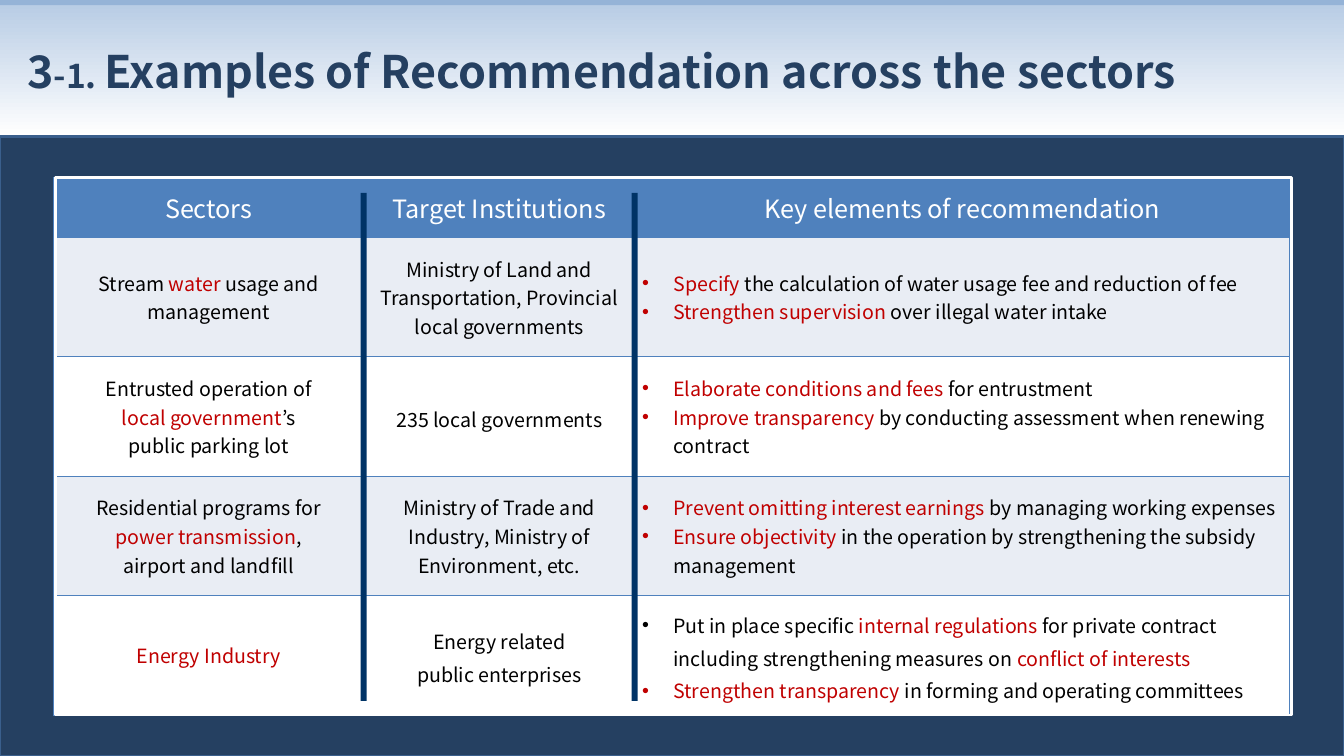
from dataclasses import dataclass

from lxml import etree
from pptx import Presentation
from pptx import util as u
from pptx.dml.color import RGBColor
from pptx.enum import shapes, text
from pptx.oxml import ns

Cm, Pt = u.Cm, u.Pt


@dataclass(frozen=True)
class Theme:
    font: str = "Noto Sans CJK KR"
    navy: str = "254061"
    navy_line: str = "3A5F8C"
    sky: str = "B9CDE5"
    top_strip: str = "95B3D7"
    blue: str = "4F81BD"
    stripe: str = "E9EDF4"
    divider: str = "003366"
    accent: str = "C00000"
    white: str = "FFFFFF"
    black: str = "000000"
    title_size: int = 32
    number_size: int = 24
    header_size: int = 18
    body_size: int = 14


T = Theme()
WIDTH, HEIGHT = 33.87, 19.05
PANEL_TOP = 3.45
TABLE_LEFT, TABLE_TOP = 1.35, 4.48
COLUMNS = [7.82, 6.83, 16.51]
HEADER_HEIGHT, ROW_HEIGHT = 1.5, 3.01

# Text between bars is set in the accent colour; a third item is line spacing.
HEADERS = ["Sectors", "Target Institutions", "Key elements of recommendation"]
ROWS = [
    [(["Stream |water| usage and management"], 1),
     (["Ministry of Land and Transportation, Provincial local governments"], 1),
     (["|Specify| the calculation of water usage fee and reduction of fee",
       "|Strengthen supervision |over illegal water intake"], 1)],
    [(["Entrusted operation of", "|local government|’s", "public parking lot"], 1),
     (["235 local governments"], 1.15),
     (["|Elaborate conditions and fees |for entrustment",
       "|Improve transparency |by conducting assessment when renewing contract"], 1)],
    [(["Residential programs for", "|power transmission|,", "airport and landfill"], 1),
     (["Ministry of Trade and Industry, Ministry of Environment, etc."], 1),
     (["|Prevent omitting interest earnings |by managing working expenses",
       "|Ensure objectivity |in the operation by strengthening the subsidy management"], 1)],
    [(["|Energy Industry|"], 1),
     (["Energy related", "public enterprises"], 1.15),
     (["Put in place specific |internal regulations |for private contract "
       "including strengthening measures on |conflict of interests|",
       "|Strengthen transparency |in forming and operating committees"], 1.15)],
]


def rgb(value):
    return RGBColor.from_string(value)


def add_run(p, content, size=T.body_size, color=T.black, bold=False):
    r = p.add_run()
    r.text = content
    r.font.name, r.font.size, r.font.bold = T.font, Pt(size), bold
    r.font.color.rgb = rgb(color)


def add_rect(s, left, top, width, height, fill=None, line=None):
    sp = s.shapes.add_shape(shapes.MSO_SHAPE.RECTANGLE,
                            Cm(left), Cm(top), Cm(width), Cm(height))
    sp.shadow.inherit = False
    if fill:
        sp.fill.solid()
        sp.fill.fore_color.rgb = rgb(fill)
    else:
        sp.fill.background()
    if line:
        sp.line.color.rgb, sp.line.width = rgb(line), Pt(2)
    else:
        sp.line.fill.background()
    return sp


def add_backdrop(s):
    band = add_rect(s, 0, 0, WIDTH, 4.42)
    band.fill.gradient()
    band.fill.gradient_angle = 90
    for stop, color, position in zip(band.fill.gradient_stops,
                                     (T.white, T.sky), (0.22, 0.97)):
        stop.color.rgb, stop.position = rgb(color), position
    add_rect(s, 0, 0, WIDTH, 0.13, fill=T.top_strip)
    add_rect(s, 0, PANEL_TOP, WIDTH, HEIGHT - PANEL_TOP, fill=T.navy, line=T.navy_line)


def format_title(s):
    title = s.shapes.title
    title.left, title.top, title.width, title.height = Cm(0.43), Cm(0.85), Cm(32.26), Cm(1.85)
    s.shapes.element.append(title.element)  # bring in front of the backdrop
    tf = title.text_frame
    tf.word_wrap, tf.auto_size = True, text.MSO_AUTO_SIZE.NONE
    tf.vertical_anchor = text.MSO_ANCHOR.MIDDLE
    p = tf.paragraphs[0]
    p.alignment = text.PP_ALIGN.LEFT
    for content, size in (("3", T.title_size), ("-1. ", T.number_size),
                          ("Examples of Recommendation across the sectors", T.title_size)):
        add_run(p, content, size=size, color=T.navy, bold=True)


def set_bullet(p):
    pPr = p._p.get_or_add_pPr()
    pPr.set("marL", str(Cm(0.79)))
    pPr.set("indent", str(-Cm(0.79)))
    etree.SubElement(pPr, ns.qn("a:buFont"), typeface="Arial")
    etree.SubElement(pPr, ns.qn("a:buChar"), char="•")


def set_borders(cell, sides):
    tcPr = cell._tc.get_or_add_tcPr()
    for side in "LRTB":
        ln = etree.SubElement(tcPr, ns.qn(f"a:ln{side}"), w=str(Pt(1)))
        if side in sides:
            solid = etree.SubElement(ln, ns.qn("a:solidFill"))
            etree.SubElement(solid, ns.qn("a:srgbClr"), val=T.blue)
        else:
            etree.SubElement(ln, ns.qn("a:noFill"))


def fill_cell(cell, lines, fill, spacing=1, bullets=False, size=T.body_size, color=T.black):
    cell.fill.solid()
    cell.fill.fore_color.rgb = rgb(fill)
    cell.vertical_anchor = text.MSO_ANCHOR.MIDDLE
    cell.margin_left = cell.margin_right = Cm(0.18)
    cell.margin_top = cell.margin_bottom = Cm(0.1)
    tf = cell.text_frame
    for i, line in enumerate(lines):
        p = tf.add_paragraph() if i else tf.paragraphs[0]
        p.alignment = text.PP_ALIGN.LEFT if bullets else text.PP_ALIGN.CENTER
        p.line_spacing = float(spacing)
        if bullets:
            set_bullet(p)
        for j, part in enumerate(line.split("|")):
            if part:
                add_run(p, part, size=size, color=T.accent if j % 2 else color)


def add_sector_table(s):
    height = HEADER_HEIGHT + ROW_HEIGHT * len(ROWS)
    table = s.shapes.add_table(len(ROWS) + 1, len(COLUMNS), Cm(TABLE_LEFT), Cm(TABLE_TOP),
                               Cm(sum(COLUMNS)), Cm(height)).table
    last = len(COLUMNS) - 1
    for c, width in enumerate(COLUMNS):
        table.columns[c].width = Cm(width)
    for r, row in enumerate(table.rows):
        row.height = Cm(ROW_HEIGHT if r else HEADER_HEIGHT)
        for c, cell in enumerate(row.cells):
            set_borders(cell, "TB" + ("L" if c == 0 else "R" if c == last else ""))
            if r == 0:
                fill_cell(cell, [HEADERS[c]], T.blue, size=T.header_size, color=T.white)
            else:
                lines, spacing = ROWS[r - 1][c]
                fill_cell(cell, lines, T.stripe if r % 2 else T.white,
                          spacing=spacing, bullets=c == last)
    # White frame and column dividers
    add_rect(s, TABLE_LEFT + 0.04, TABLE_TOP, sum(COLUMNS), height, line=T.white)
    for c in (1, 2):
        add_rect(s, TABLE_LEFT + sum(COLUMNS[:c]) - 0.08, 4.86, 0.15, 12.8, fill=T.divider)


def main():
    prs = Presentation()
    prs.slide_width, prs.slide_height = Cm(WIDTH), Cm(HEIGHT)
    s = prs.slides.add_slide(prs.slide_layouts[5])
    add_backdrop(s)
    format_title(s)
    add_sector_table(s)
    prs.save("out.pptx")


if __name__ == "__main__":
    main()
